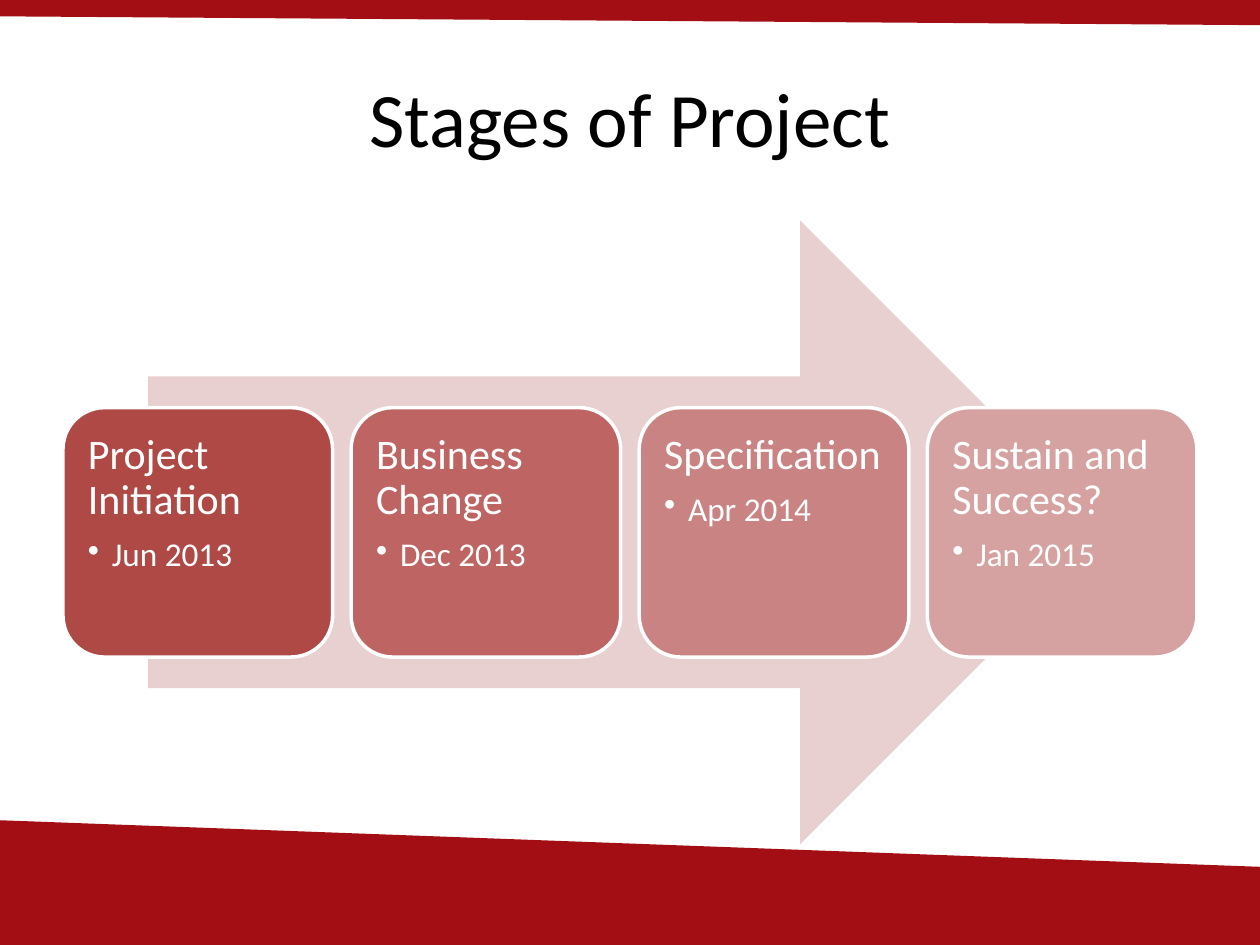
from lxml import etree
from pptx import Presentation
from pptx.dml.color import RGBColor
from pptx.enum.shapes import MSO_SHAPE
from pptx.enum.text import MSO_ANCHOR, PP_ALIGN
from pptx.oxml.ns import qn
from pptx.util import Inches, Pt

ARROW, CARD = MSO_SHAPE.RIGHT_ARROW, MSO_SHAPE.ROUNDED_RECTANGLE
TOP, MIDDLE = MSO_ANCHOR.TOP, MSO_ANCHOR.MIDDLE
LEFT, CENTER = PP_ALIGN.LEFT, PP_ALIGN.CENTER
FONT = "Calibri"
WHITE, BLACK, BAND, PALE = "FFFFFF", "000000", "A20E13", "E8D0D0"
STAGES = [
    ("Project Initiation", "Jun 2013", "AE4946"),
    ("Business Change", "Dec 2013", "BE6462"),
    ("Specification", "Apr 2014", "C98382"),
    ("Sustain and Success?", "Jan 2015", "D6A2A1"),
]


def color(value):
    """Return the RGB colour for a hex string."""
    return RGBColor.from_string(value)


def style(sp, fill, line=None, width=2):
    """Give a shape a solid fill, an optional outline and no shadow."""
    sp.shadow.inherit = False
    sp.fill.solid()
    sp.fill.fore_color.rgb = color(fill)
    if line:
        sp.line.color.rgb = color(line)
        sp.line.width = Pt(width)
    else:
        sp.line.fill.background()


def add_shape(s, kind, box, fill, line=None):
    """Add a preset shape in a box given in inches."""
    sp = s.shapes.add_shape(kind, *map(Inches, box))
    style(sp, fill, line)


def add_frame(s, box, anchor=TOP, inset=0.1):
    """Add a wrapping text box and return its text frame."""
    tf = s.shapes.add_textbox(*map(Inches, box)).text_frame
    tf.word_wrap = True
    tf.vertical_anchor = anchor
    tf.margin_left = tf.margin_right = Inches(inset)
    tf.margin_top = tf.margin_bottom = Inches(inset)
    return tf


def write(p, text, size, fill=WHITE, align=LEFT, spacing=1.0, after=0, bullet=None):
    """Fill a paragraph with one formatted run."""
    p.alignment = align
    p.line_spacing = spacing
    p.space_after = Pt(after)
    if bullet:
        p.level = 1
        pPr = p._p.get_or_add_pPr()
        pPr.set("marL", str(Inches(0.19)))
        pPr.set("indent", str(Inches(-0.19)))
        etree.SubElement(pPr, qn("a:buChar")).set("char", bullet)
    r = p.add_run()
    r.text = text
    r.font.name = FONT
    r.font.size = Pt(size)
    r.font.color.rgb = color(fill)


def add_band(s, points):
    """Add a closed band through points given in inches."""
    start, *rest = [(Inches(x), Inches(y)) for x, y in points]
    fb = s.shapes.build_freeform(*start)
    fb.add_line_segments(rest, close=True)
    style(fb.convert_to_shape(), BAND)


def add_title(s, box):
    """Add the centred slide title."""
    tf = add_frame(s, box, MIDDLE)
    write(tf.paragraphs[0], "Stages of Project", 44, BLACK, CENTER)


def add_card(s, box, name, date, fill):
    """Add one stage card with its name and date."""
    x, y, w, h = box
    pad = 0.1
    add_shape(s, CARD, box, fill, WHITE)
    tf = add_frame(s, (x + pad, y + pad, w - 2 * pad, h - 2 * pad))
    write(tf.paragraphs[0], name, 24, spacing=0.9, after=8.4)
    write(tf.add_paragraph(), date, 19, spacing=0.9, after=2.85, bullet="•")


def add_process(s, box):
    """Add the arrow and an even row of stage cards over it."""
    x, y, w, h = box
    arrow_w, card_w, card_h = 0.85 * w, 2.14, 0.4 * h
    step = (w - card_w) / (len(STAGES) - 1)
    add_shape(s, ARROW, (x + (w - arrow_w) / 2, y, arrow_w, h), PALE)
    for i, stage in enumerate(STAGES):
        card = (x + i * step, y + (h - card_h) / 2, card_w, card_h)
        add_card(s, card, *stage)


def main():
    """Build and save the slide."""
    prs = Presentation()
    prs.slide_width, prs.slide_height = Inches(10), Inches(7.5)
    s = prs.slides.add_slide(prs.slide_layouts[6])
    add_title(s, (0.5, 0.3, 9, 1.25))
    add_process(s, (0.5, 1.75, 9, 4.95))
    add_band(s, [(0, 6.51), (10, 6.88), (10, 7.5), (0, 7.5)])
    add_band(s, [(0, 0), (10, 0), (10, 0.2), (0, 0.13)])
    prs.save("out.pptx")


if __name__ == "__main__":
    main()
